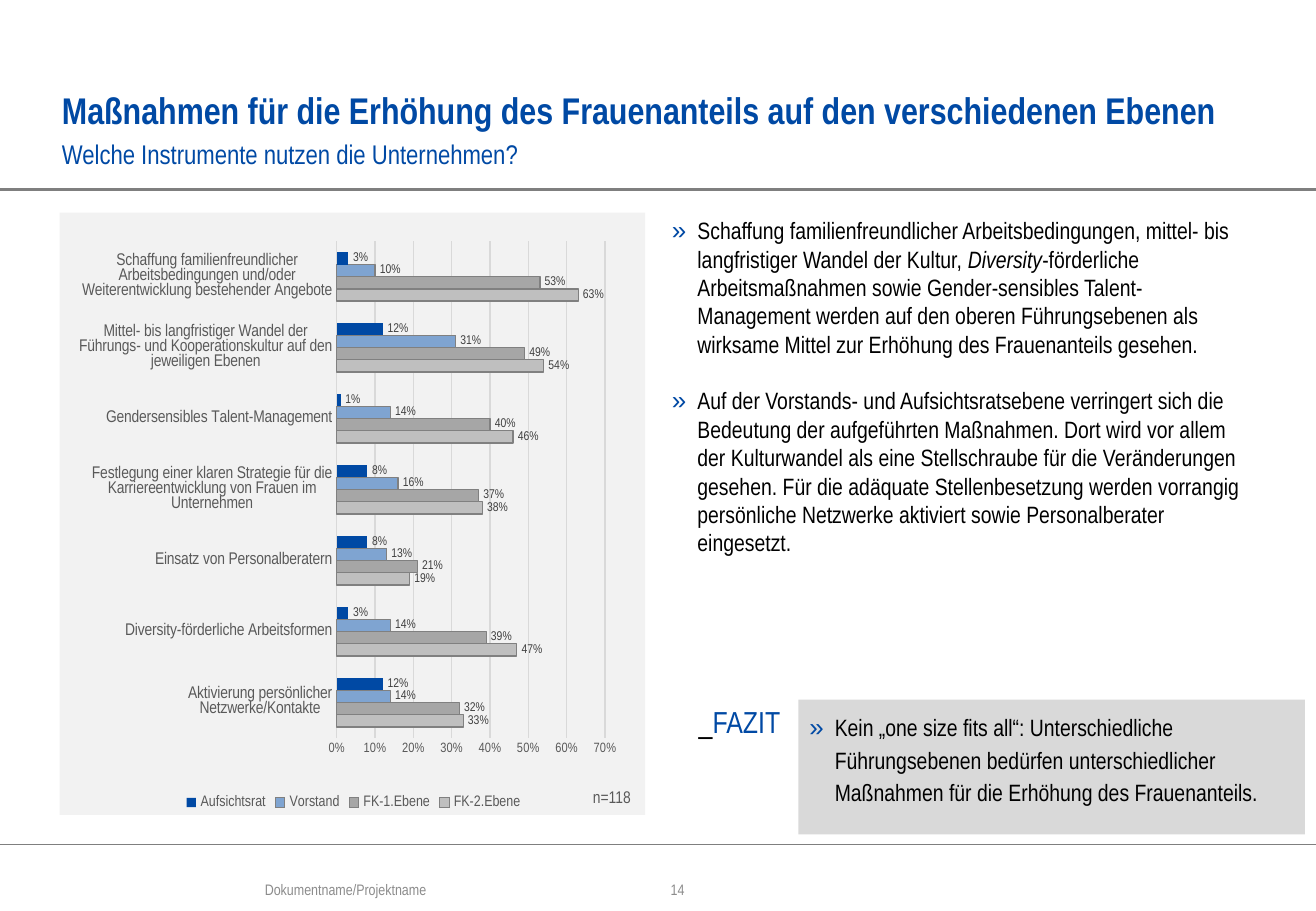
from lxml import etree
from pptx import Presentation
from pptx import util as u
from pptx.chart import data
from pptx.dml.color import RGBColor
from pptx.enum import chart as ch, shapes, text
from pptx.oxml import parse_xml
from pptx.oxml.ns import nsdecls, qn

PX = 9144  # 100 px to the inch
FONT = "Arial Narrow"
HUE = {
    "blue": "0049A4", "sky": "7FA4D1", "black": "000000", "rule": "7F7F7F",
    "edge": "808080", "foot": "8C8C8C", "label": "404040", "axis": "595959",
    "mid": "A6A6A6", "light": "BFBFBF", "grid": "D9D9D9", "panel": "F2F2F2",
}
CATS = [
    "Aktivierung persönlicher Netzwerke/Kontakte",
    "Diversity-förderliche Arbeitsformen",
    "Einsatz von Personalberatern",
    "Festlegung einer klaren Strategie für die Karriereentwicklung von Frauen im Unternehmen",
    "Gendersensibles Talent-Management",
    "Mittel- bis langfristiger Wandel der Führungs- und Kooperationskultur auf den jeweiligen Ebenen",
    "Schaffung familienfreundlicher Arbeitsbedingungen und/oder Weiterentwicklung bestehender Angebote",
]
LEVELS = [  # name, fill, edge, percent per category
    ("FK-2.Ebene", "light", "edge", [33, 47, 19, 38, 46, 54, 63]),
    ("FK-1.Ebene", "mid", "edge", [32, 39, 21, 37, 40, 49, 53]),
    ("Vorstand", "sky", "edge", [14, 14, 13, 16, 14, 31, 10]),
    ("Aufsichtsrat", "blue", None, [12, 3, 8, 8, 1, 12, 3]),
]
POINTS = [
    [("Schaffung familienfreundlicher Arbeitsbedingungen, mittel- bis langfristiger "
      "Wandel der Kultur, ", False), ("Diversity", True),
     ("-förderliche Arbeitsmaßnahmen sowie Gender-sensibles Talent-Management werden "
      "auf den oberen Führungsebenen als wirksame Mittel zur Erhöhung des "
      "Frauenanteils gesehen.", False)],
    [("Auf der Vorstands- und Aufsichtsratsebene verringert sich die Bedeutung der "
      "aufgeführten Maßnahmen. Dort wird vor allem der Kulturwandel als eine "
      "Stellschraube für die Veränderungen gesehen. Für die adäquate Stellenbesetzung "
      "werden vorrangig persönliche Netzwerke aktiviert sowie Personalberater "
      "eingesetzt.", False)],
]
CLAIM = [[("Kein „one size fits all“: Unterschiedliche Führungsebenen bedürfen "
           "unterschiedlicher Maßnahmen für die Erhöhung des Frauenanteils.", False)]]


def rgb(hue):
    return RGBColor.from_string(HUE[hue])


def style(font, size, hue, bold=False):
    font.name, font.size, font.bold = FONT, u.Pt(size), bold
    font.color.rgb = rgb(hue)


def frame(slide, x, y, w, h, wrap=True):
    tf = slide.shapes.add_textbox(x * PX, y * PX, w * PX, h * PX).text_frame
    tf.margin_left = tf.margin_right = tf.margin_top = tf.margin_bottom = 0
    tf.word_wrap = wrap
    return tf


def label(slide, box, words, size, hue, bold=False, lead=None, low=False):
    tf = frame(slide, *box)
    if low:
        tf.vertical_anchor = text.MSO_ANCHOR.BOTTOM
    para = tf.paragraphs[0]
    para.text = words
    if lead:
        para.line_spacing = u.Pt(lead)
    style(para.font, size, hue, bold)


def panel(slide, x, y, w, h, hue):
    rect = slide.shapes.add_shape(
        shapes.MSO_SHAPE.RECTANGLE, x * PX, y * PX, w * PX, h * PX)
    rect.shadow.inherit = False
    rect.fill.solid()
    rect.fill.fore_color.rgb = rgb(hue)
    rect.line.fill.background()


def rule(slide, y, w, width):
    line = slide.shapes.add_connector(
        shapes.MSO_CONNECTOR.STRAIGHT, 0, y * PX, w * PX, y * PX)
    line.line.color.rgb = rgb("rule")
    line.line.width = u.Pt(width)
    etree.SubElement(line._element.spPr, qn("a:effectLst"))


def bullets(slide, box, items, lead=1.0):
    tf = frame(slide, *box)
    for i, runs in enumerate(items):
        para = tf.add_paragraph() if i else tf.paragraphs[0]
        props = para._p.get_or_add_pPr()
        props.set("marL", str(21 * PX))
        props.set("indent", str(-21 * PX))
        para.line_spacing = lead
        if i:
            para.space_before = u.Pt(16.8)
        ns = nsdecls("a")
        for xml in (f'<a:buClr {ns}><a:srgbClr val="{HUE["blue"]}"/></a:buClr>',
                    f'<a:buSzPct {ns} val="110000"/>',
                    f'<a:buFont {ns} typeface="Arial"/>',
                    f'<a:buChar {ns} char="»"/>'):
            props.append(parse_xml(xml))
        style(para.font, 14, "black")
        for words, slant in runs:
            run = para.add_run()
            run.text = words
            if slant:
                run.font.italic = True


def header(slide, x, y, w):
    label(slide, (x, y, w, 76), "Maßnahmen für die Erhöhung des Frauenanteils auf den "
          "verschiedenen Ebenen", 22, "blue", True, 27, True)
    label(slide, (x, y + 76, w, 26), "Welche Instrumente nutzen die Unternehmen?",
          16, "blue", lead=22)


def bars(slide, x, y, w, h):
    panel(slide, x, y, w, h, "panel")
    sheet = data.CategoryChartData(number_format="0%")
    sheet.categories = CATS
    for name, _, _, vals in LEVELS:
        sheet.add_series(name, [v / 100 for v in vals])
    chart = slide.shapes.add_chart(
        ch.XL_CHART_TYPE.BAR_CLUSTERED, (x + 12) * PX, (y + 9) * PX,
        (w - 22) * PX, (h - 9) * PX, sheet).chart
    style(chart.font, 10, "black")
    chart.has_title = False

    # Series and value labels
    plot = chart.plots[0]
    plot.gap_width, plot.overlap, plot.vary_by_categories = 182, 0, False
    for ser, (_, fill, edge, _) in zip(plot.series, LEVELS):
        ser.format.fill.solid()
        ser.format.fill.fore_color.rgb = rgb(fill)
        if edge:
            ser.format.line.color.rgb = rgb(edge)
            ser.format.line.width = u.Pt(0.75)
        else:
            ser.format.line.fill.background()
        tags = ser.data_labels
        tags.show_value = True
        tags.number_format, tags.number_format_is_linked = "0%", False
        tags.position = ch.XL_LABEL_POSITION.OUTSIDE_END
        style(tags.font, 7.5, "label")

    # Axes
    cat, val = chart.category_axis, chart.value_axis
    for axis, size in ((cat, 10), (val, 8)):
        axis.major_tick_mark = axis.minor_tick_mark = ch.XL_TICK_MARK.NONE
        style(axis.tick_labels.font, size, "axis")
    val.minimum_scale, val.maximum_scale, val.major_unit = 0, 0.7, 0.1
    val.tick_labels.number_format = "0%"
    val.tick_labels.number_format_is_linked = False
    val.format.line.fill.background()
    val.has_major_gridlines = True
    for line in (cat.format.line, val.major_gridlines.format.line):
        line.color.rgb = rgb("grid")
        line.width = u.Pt(0.75)

    # Legend, plot area and sample size
    chart.has_legend = True
    chart.legend.position = ch.XL_LEGEND_POSITION.BOTTOM
    chart.legend.include_in_layout = False
    style(chart.legend.font, 9, "axis")
    area = chart._chartSpace.chart.plotArea
    for old in area.findall(qn("c:layout")):
        area.remove(old)
    parts = [("layoutTarget", "inner"), ("xMode", "edge"), ("yMode", "edge"),
             ("x", 0.47), ("y", 0.03), ("w", 0.48), ("h", 0.84)]
    inner = "".join(f'<c:{tag} val="{v}"/>' for tag, v in parts)
    area.insert(0, parse_xml(f'<c:layout {nsdecls("c")}><c:manualLayout>{inner}'
                             '</c:manualLayout></c:layout>'))
    label(slide, (x + 439, y + 473, 32, 17, False), "n=118", 10, "axis")


def claim(slide, x, y, w, h):
    tf = frame(slide, x - 82, y + 3, 74, 30, False)
    para = tf.paragraphs[0]
    style(para.font, 18, "black")
    for words, hue in (("_", "black"), ("FAZIT", "blue")):
        run = para.add_run()
        run.text = words
        run.font.color.rgb = rgb(hue)
    panel(slide, x, y, w, h, "grid")
    bullets(slide, (x + 9, y + 8, w - 26, h - 11), CLAIM, 1.14)


def footer(slide, y):
    label(slide, (218, y, 313, 13), "Dokumentname/Projektname", 9, "foot")
    label(slide, (552, y, 120, 12), "14", 9, "foot")


def main():
    prs = Presentation()
    prs.slide_width, prs.slide_height = 1083 * PX, 750 * PX
    slide = prs.slides.add_slide(prs.slide_layouts[6])
    rule(slide, 156, 1083, 2)
    rule(slide, 695, 1083, 0.75)
    header(slide, 51, 33, 981)
    bars(slide, 49, 175, 482, 496)
    bullets(slide, (553, 178, 480, 498), POINTS)
    claim(slide, 657, 576, 417, 111)
    footer(slide, 725)
    prs.save("out.pptx")


if __name__ == "__main__":
    main()
